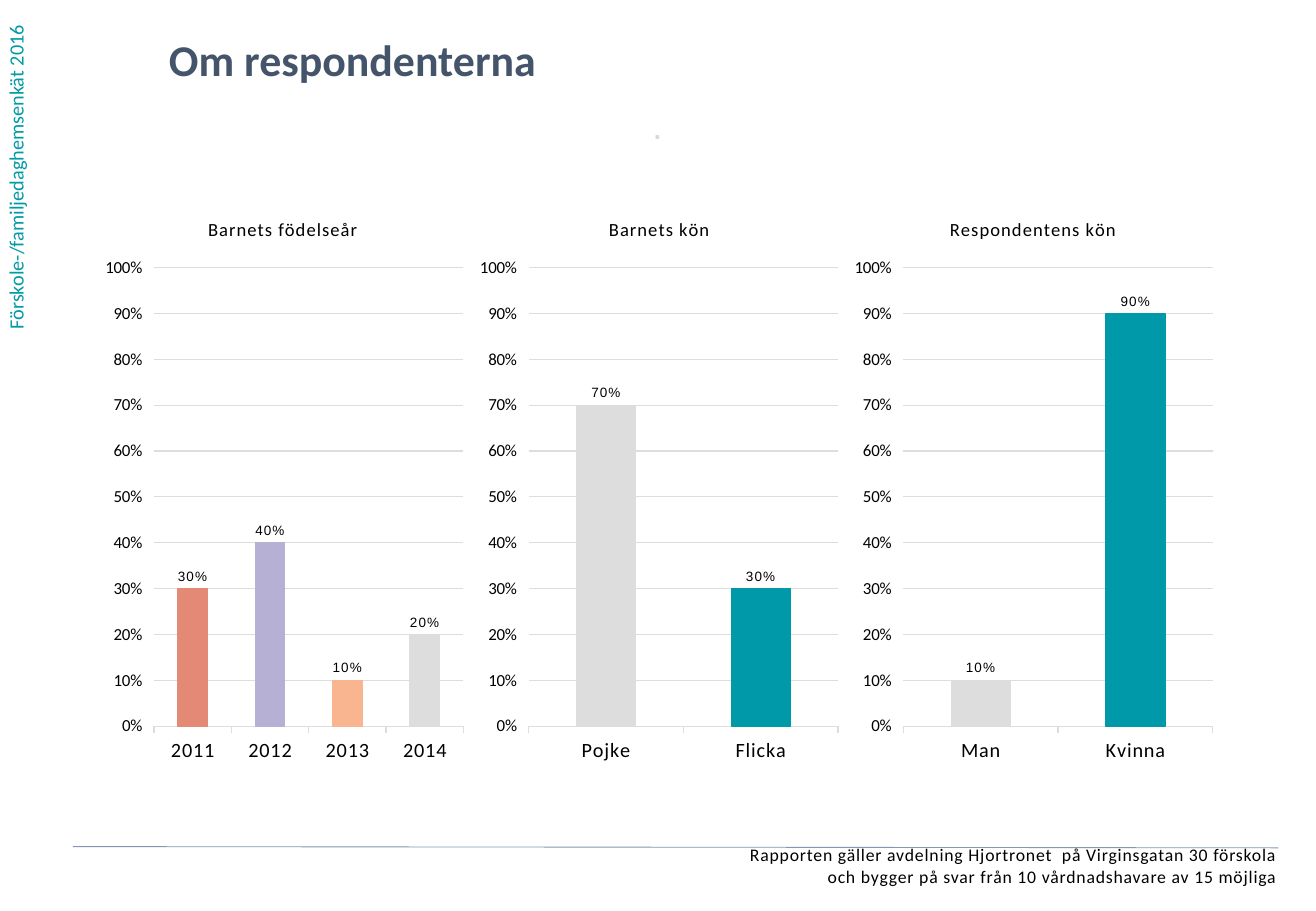
from lxml import etree
from pptx import Presentation
from pptx import util as u
from pptx.chart import data as cd
from pptx.dml.color import RGBColor
from pptx.enum import chart as ce, text
from pptx.oxml import ns

TEAL_TEXT = RGBColor(0x00, 0x9B, 0xA4)
TEAL = RGBColor(0x00, 0x99, 0xAA)
NAVY = RGBColor(0x44, 0x54, 0x6A)
RULE = RGBColor(0x84, 0x97, 0xB0)
PALE = RGBColor(0xD2, 0xD9, 0xE2)
BLACK = RGBColor(0x00, 0x00, 0x00)
GREY = RGBColor(0xDD, 0xDD, 0xDD)
PEACH = RGBColor(0xF9, 0xB5, 0x90)
LILAC = RGBColor(0xB6, 0xB1, 0xD4)
CORAL = RGBColor(0xE5, 0x89, 0x77)

CHARTS = [
    ("Barnets födelseår", 0.29, [("2014", 0.2, GREY), ("2013", 0.1, PEACH),
                                 ("2012", 0.4, LILAC), ("2011", 0.3, CORAL)]),
    ("Barnets kön", 0.36, [("Flicka", 0.3, TEAL), ("Pojke", 0.7, GREY)]),
    ("Respondentens kön", 0.27, [("Kvinna", 0.9, TEAL), ("Man", 0.1, GREY)]),
]


def style_font(font, size, color, name="Calibri", bold=False):
    """Set the face, size and colour of a font."""
    font.name, font.size, font.bold = name, u.Pt(size), bold
    font.color.rgb = color


def add_text(s, box, content, size, color, align=text.PP_ALIGN.LEFT,
             bold=False, spacing=0, inset=0):
    """Place a text box and return its text frame."""
    tf = s.shapes.add_textbox(*map(u.Inches, box)).text_frame
    tf.word_wrap = True
    tf.margin_left = tf.margin_right = u.Inches(inset)
    tf.margin_top = tf.margin_bottom = u.Inches(inset / 2)
    tf.text = content
    for p in tf.paragraphs:
        p.alignment = align
        for r in p.runs:
            style_font(r.font, size, color, bold=bold)
            r.font._element.set("spc", str(spacing))
    return tf


def add_side_label(s, box):
    """Place the survey name running up the left edge."""
    tf = add_text(s, box, "Förskole-/familjedaghemsenkät 2016", 12, TEAL_TEXT, inset=0.1)
    tf._txBody.bodyPr.set("vert", "vert270")


def add_heading(s, left, top):
    """Place the slide title and the small dot below it."""
    add_text(s, (left, top, 8.34, 0.57), "Om respondenterna", 26, NAVY, bold=True)
    add_text(s, (left + 2.48, top + 0.75, 3.08, 0.39), "⋅", 12, PALE,
             text.PP_ALIGN.CENTER, bold=True, spacing=50)


def add_footer(s, left, top, width):
    """Place the rule and the note on the report's basis."""
    line = s.shapes.add_connector(1, *map(u.Inches, (left, top, left + width, top + 0.01)))
    line.line.color.rgb = RULE
    line.line.width = u.Pt(0.5)
    etree.SubElement(line._element.spPr, ns.qn("a:effectLst"))
    add_text(s, (left, top - 0.02, width - 0.01, 0.43),
             "Rapporten gäller avdelning Hjortronet  på Virginsgatan 30 förskola\n"
             "och bygger på svar från 10 vårdnadshavare av 15 möjliga",
             10.5, BLACK, text.PP_ALIGN.RIGHT, spacing=50)


def set_layout(parent, index, **values):
    """Fix the position of a chart part as fractions of the chart."""
    for old in parent.findall(ns.qn("c:layout")):
        parent.remove(old)
    layout = etree.Element(ns.qn("c:layout"))
    manual = etree.SubElement(layout, ns.qn("c:manualLayout"))
    for tag, value in values.items():
        etree.SubElement(manual, ns.qn("c:" + tag)).set("val", str(value))
    parent.insert(index, layout)


def style_axes(chart):
    """Format the reversed category axis and the percentage axis."""
    cat, val = chart.category_axis, chart.value_axis
    cat.reverse_order = True
    cat.major_tick_mark = ce.XL_TICK_MARK.OUTSIDE
    style_font(cat.tick_labels.font, 12, BLACK)
    val.minimum_scale, val.maximum_scale, val.major_unit = 0, 1, 0.1
    val.tick_label_position = ce.XL_TICK_LABEL_POSITION.HIGH
    val.format.line.fill.background()
    val.tick_labels.number_format = "0%;0%"
    val.tick_labels.number_format_is_linked = False
    style_font(val.tick_labels.font, 10, BLACK)
    for line in (cat.format.line, val.major_gridlines.format.line):
        line.color.rgb = GREY
        line.width = u.Pt(0.75)


def add_bar_chart(s, box, title, title_x, bars):
    """Place one titled column chart with a colour for each bar."""
    data = cd.CategoryChartData(number_format="0%;0%")
    data.categories = [name for name, _, _ in bars]
    data.add_series("Series 1", [value for _, value, _ in bars])
    chart = s.shapes.add_chart(ce.XL_CHART_TYPE.COLUMN_CLUSTERED,
                               *map(u.Inches, box), data).chart
    chart.has_legend = False
    style_font(chart.font, 10, BLACK)
    style_axes(chart)

    heading = chart.chart_title
    heading.text_frame.text = title
    r = heading.text_frame.paragraphs[0].runs[0]
    style_font(r.font, 11, BLACK)
    r.font._element.set("spc", "50")
    set_layout(heading._element, 1, xMode="edge", yMode="edge", x=title_x, y=0.033)

    plot = chart.plots[0]
    plot.gap_width = 162
    plot.vary_by_categories = False
    series = plot.series[0]
    series.format.fill.solid()
    series.format.fill.fore_color.rgb = TEAL
    for i, (_, _, color) in enumerate(bars):
        fmt = series.points[i].format
        fmt.fill.solid()
        fmt.fill.fore_color.rgb = color
        fmt.line.color.rgb = color
        fmt.line.width = u.Pt(0.75)
    labels = series.data_labels
    labels.show_value = True
    labels.number_format = "0%;0%"
    labels.number_format_is_linked = False
    labels.position = ce.XL_LABEL_POSITION.OUTSIDE_END
    style_font(labels.font, 8, BLACK, "Arial")

    root = chart._chartSpace
    for props in root.xpath(".//c:catAx//a:defRPr | .//c:dLbls//a:defRPr"):
        props.set("spc", "50")
    set_layout(root.xpath(".//c:plotArea")[0], 0, layoutTarget="inner", xMode="edge",
               yMode="edge", x=0.155, y=0.127, w=0.826, h=0.793)


def add_chart_row(s, left, top, width, height):
    """Place the charts side by side in equal columns."""
    step = width / len(CHARTS)
    for i, (title, title_x, bars) in enumerate(CHARTS):
        add_bar_chart(s, (left + i * step, top, step, height), title, title_x, bars)


def main():
    """Build and save the slide."""
    prs = Presentation()
    prs.slide_width, prs.slide_height = u.Inches(10.83), u.Inches(7.5)
    s = prs.slides.add_slide(prs.slide_layouts[6])
    add_side_label(s, (-0.02, 0, 0.4, 2.81))
    add_heading(s, 1.39, 0.27)
    add_chart_row(s, 0.79, 1.6, 9.25, 4.76)
    add_footer(s, 0.6, 6.97, 9.92)
    prs.save("out.pptx")


if __name__ == "__main__":
    main()
